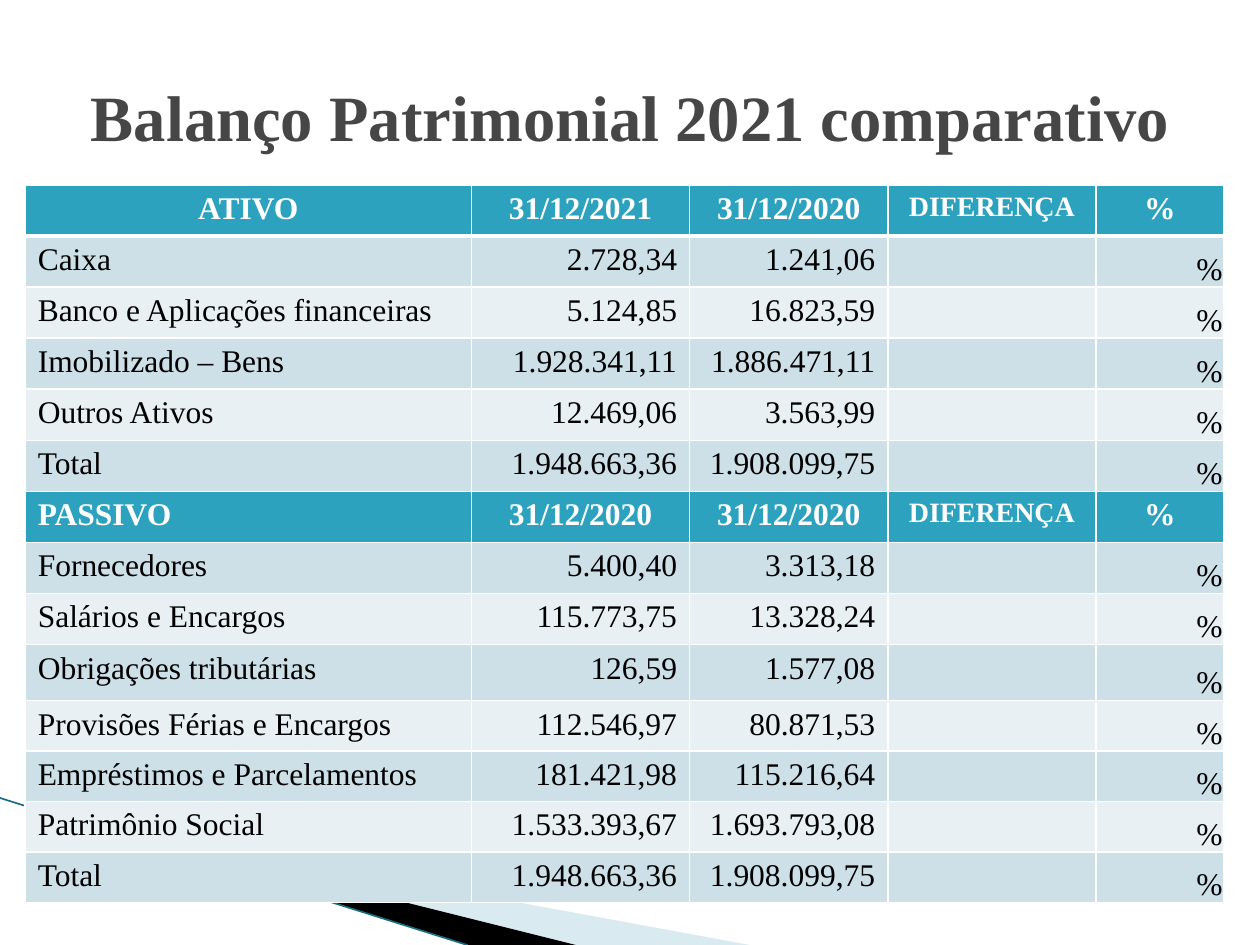
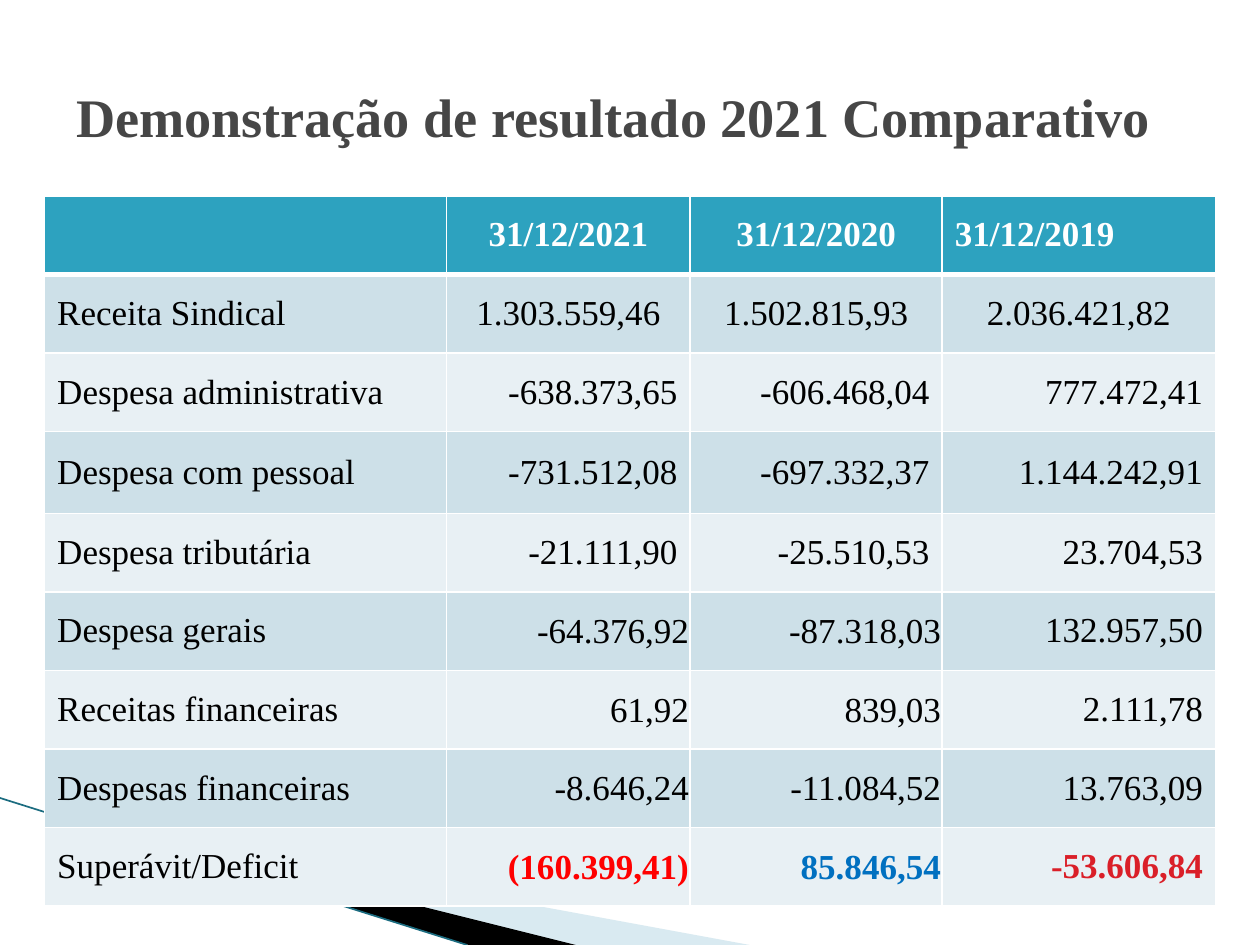
from dataclasses import dataclass, replace

from pptx import Presentation
from pptx import util as u
from pptx.dml.color import RGBColor
from pptx.enum import shapes, text
from pptx.oxml import parse_xml
from pptx.oxml.ns import nsdecls, qn
from lxml import etree

Pt = u.Pt
WHITE = RGBColor(0xFF, 0xFF, 0xFF)
BLACK = RGBColor(0, 0, 0)
TITLE_GREY = RGBColor(0x46, 0x46, 0x46)
HEADER_TEAL = RGBColor(0x2D, 0xA2, 0xBF)
BAND_DARK = RGBColor(0xCD, 0xE0, 0xE8)
BAND_LIGHT = RGBColor(0xE8, 0xF0, 0xF4)
RIBBON_BLUE = RGBColor(0xA0, 0xCB, 0xDC)
RIBBON_LINE = RGBColor(0x1B, 0x6C, 0x80)
LOSS_RED = RGBColor(0xFF, 0, 0)
GAIN_BLUE = RGBColor(0, 0x70, 0xC0)
DARK_RED = RGBColor(0xDA, 0x1F, 0x28)

FONT = "Times New Roman"
LEFT, CENTER, RIGHT = text.PP_ALIGN.LEFT, text.PP_ALIGN.CENTER, text.PP_ALIGN.RIGHT
TOP, MIDDLE, BOTTOM = (text.MSO_ANCHOR.TOP, text.MSO_ANCHOR.MIDDLE,
                       text.MSO_ANCHOR.BOTTOM)


@dataclass(frozen=True)
class Look:
    """How the text of one cell is set."""
    size: float = 18
    align: int = RIGHT
    anchor: int = TOP
    color: RGBColor = BLACK
    bold: bool = False
    tight: bool = False


class Report:
    """Shared style and the slide being filled."""

    def __init__(self):
        self.deck = Presentation()
        self.deck.slide_width, self.deck.slide_height = Pt(720), Pt(540)
        self.page = None

    def new_page(self):
        self.page = self.deck.slides.add_slide(self.deck.slide_layouts[6])
        # Ribbons in the lower left corner
        self.ribbon([(39.6, 468.5), (428.4, 540), (328.3, 540), (39.6, 468)],
                    RIBBON_BLUE, 40)
        self.ribbon([(38.2, 467.3), (329, 540), (267.8, 540), (38.9, 468)], BLACK)
        self.line((0, 456), (267, 540))

    def ribbon(self, points, color, opacity=100):
        corners = [(Pt(x), Pt(y)) for x, y in points]
        builder = self.page.shapes.build_freeform(*corners[0])
        builder.add_line_segments(corners[1:], close=True)
        shape = builder.convert_to_shape()
        shape.shadow.inherit = False
        shape.line.fill.background()
        shape.fill.solid()
        shape.fill.fore_color.rgb = color
        if opacity < 100:
            tint = shape._element.spPr.find(".//" + qn("a:srgbClr"))
            etree.SubElement(tint, qn("a:alpha")).set("val", str(opacity * 1000))

    def line(self, start, end):
        line = self.page.shapes.add_connector(
            shapes.MSO_CONNECTOR.STRAIGHT, *map(Pt, start + end))
        line.line.color.rgb = RIBBON_LINE
        line.line.width = Pt(0.95)
        etree.SubElement(line._element.spPr, qn("a:effectLst"))

    def set_text(self, para, words, look):
        para.alignment = look.align
        font = para.font
        font.name, font.size, font.bold = FONT, Pt(look.size), look.bold
        font.color.rgb = look.color
        if words:
            para.add_run().text = words

    def title(self, words, size, align):
        box = self.page.shapes.add_textbox(Pt(36.4), Pt(21.3), Pt(648), Pt(90))
        frame = box.text_frame
        frame.word_wrap = True
        frame.vertical_anchor = MIDDLE
        self.set_text(frame.paragraphs[0], words,
                      Look(size, align, color=TITLE_GREY, bold=True))

    def borders(self, cell, top, bottom):
        properties = cell._tc.get_or_add_tcPr()
        for side, width in (("L", 1), ("R", 1), ("T", top), ("B", bottom)):
            properties.append(parse_xml(
                f'<a:ln{side} {nsdecls("a")} w="{Pt(width)}"><a:solidFill>'
                f'<a:srgbClr val="{WHITE}"/></a:solidFill></a:ln{side}>'))

    def table(self, left, top, widths, heights, rows, headers, look_of):
        """look_of(row, column) gives the Look of each cell."""
        table = self.page.shapes.add_table(
            len(rows), len(widths), Pt(left), Pt(top),
            Pt(sum(widths)), Pt(sum(heights))).table
        table.first_row = table.horz_banding = False
        for column, width in zip(table.columns, widths):
            column.width = Pt(width)
        band = 0
        for r, (words_in_row, height) in enumerate(zip(rows, heights)):
            table.rows[r].height = Pt(height)
            band = 0 if r in headers else band + 1
            color = (HEADER_TEAL if r in headers
                     else BAND_DARK if band % 2 else BAND_LIGHT)
            for c, words in enumerate(words_in_row):
                cell, look = table.cell(r, c), look_of(r, c)
                self.borders(cell, 3 if r == 1 else 1, 3 if r == 0 else 1)
                cell.fill.solid()
                cell.fill.fore_color.rgb = color
                cell.vertical_anchor = look.anchor
                if look.tight:
                    cell.margin_left = cell.margin_right = cell.margin_top = Pt(0.72)
                    cell.margin_bottom = 0
                elif not words:
                    cell.margin_top = cell.margin_bottom = 0
                self.set_text(cell.text_frame.paragraphs[0], words, look)


# Balance sheet
def balance_look(row, column):
    if row in (0, 6):
        return Look(size=16 if column == 3 else 18, color=WHITE, bold=True,
                    align=LEFT if (row, column) == (6, 0) else CENTER)
    if column == 4:
        return Look(anchor=BOTTOM, tight=True)
    return Look(align=RIGHT if column else LEFT)


def balance_page(report):
    accounts = [
        ("ATIVO", "31/12/2021", "31/12/2020"),
        ("Caixa", "2.728,34", "1.241,06"),
        ("Banco e Aplicações financeiras", "5.124,85", "16.823,59"),
        ("Imobilizado – Bens", "1.928.341,11", "1.886.471,11"),
        ("Outros Ativos", "12.469,06", "3.563,99"),
        ("Total", "1.948.663,36", "1.908.099,75"),
        ("PASSIVO", "31/12/2020", "31/12/2020"),
        ("Fornecedores", "5.400,40", "3.313,18"),
        ("Salários e Encargos", "115.773,75", "13.328,24"),
        ("Obrigações tributárias", "126,59", "1.577,08"),
        ("Provisões Férias e Encargos", "112.546,97", "80.871,53"),
        ("Empréstimos e Parcelamentos", "181.421,98", "115.216,64"),
        ("Patrimônio Social", "1.533.393,67", "1.693.793,08"),
        ("Total", "1.948.663,36", "1.908.099,75"),
    ]
    headers = (0, 6)
    rows = [account + ("DIFERENÇA" if r in headers else "", "%")
            for r, account in enumerate(accounts)]
    report.new_page()
    report.title("Balanço Patrimonial 2021 comparativo", 36.9, CENTER)
    report.table(14.4, 105.6, [255, 124.75, 113.25, 119, 73],
                 [29.2] * 9 + [32] + [27.1] * 4, rows, headers, balance_look)


# Income statement
def result_look(row, column):
    look = Look(size=20, anchor=MIDDLE, align=RIGHT if column else LEFT)
    if row == 0:
        return replace(look, color=WHITE, bold=True,
                       align=LEFT if column == 3 else CENTER)
    if row == 1 and column:
        return replace(look, align=CENTER)
    if row >= 5 and column in (1, 2):
        look = replace(look, tight=True)
    if row == 8 and column:
        color = (LOSS_RED, GAIN_BLUE, DARK_RED)[column - 1]
        look = replace(look, color=color, bold=True)
    return look


def result_page(report):
    rows = [
        ("", "31/12/2021", "31/12/2020", "31/12/2019"),
        ("Receita Sindical", "1.303.559,46", "1.502.815,93", "2.036.421,82"),
        ("Despesa administrativa", "-638.373,65", "-606.468,04", "777.472,41"),
        ("Despesa com pessoal", "-731.512,08", "-697.332,37", "1.144.242,91"),
        ("Despesa tributária", "-21.111,90", "-25.510,53", "23.704,53"),
        ("Despesa gerais", "-64.376,92", "-87.318,03", "132.957,50"),
        ("Receitas financeiras", "61,92", "839,03", "2.111,78"),
        ("Despesas financeiras", "-8.646,24", "-11.084,52", "13.763,09"),
        ("Superávit/Deficit", "(160.399,41)", "85.846,54", "-53.606,84"),
    ]
    report.new_page()
    report.title("Demonstração de resultado 2021 Comparativo", 31, LEFT)
    report.table(25.5, 111.9, [229.7, 139.2, 144, 156.2],
                 [44.9] * 3 + [46.8] + [44.9] * 5, rows, (0,), result_look)


def main():
    report = Report()
    balance_page(report)
    result_page(report)
    report.deck.save("out.pptx")


if __name__ == "__main__":
    main()
